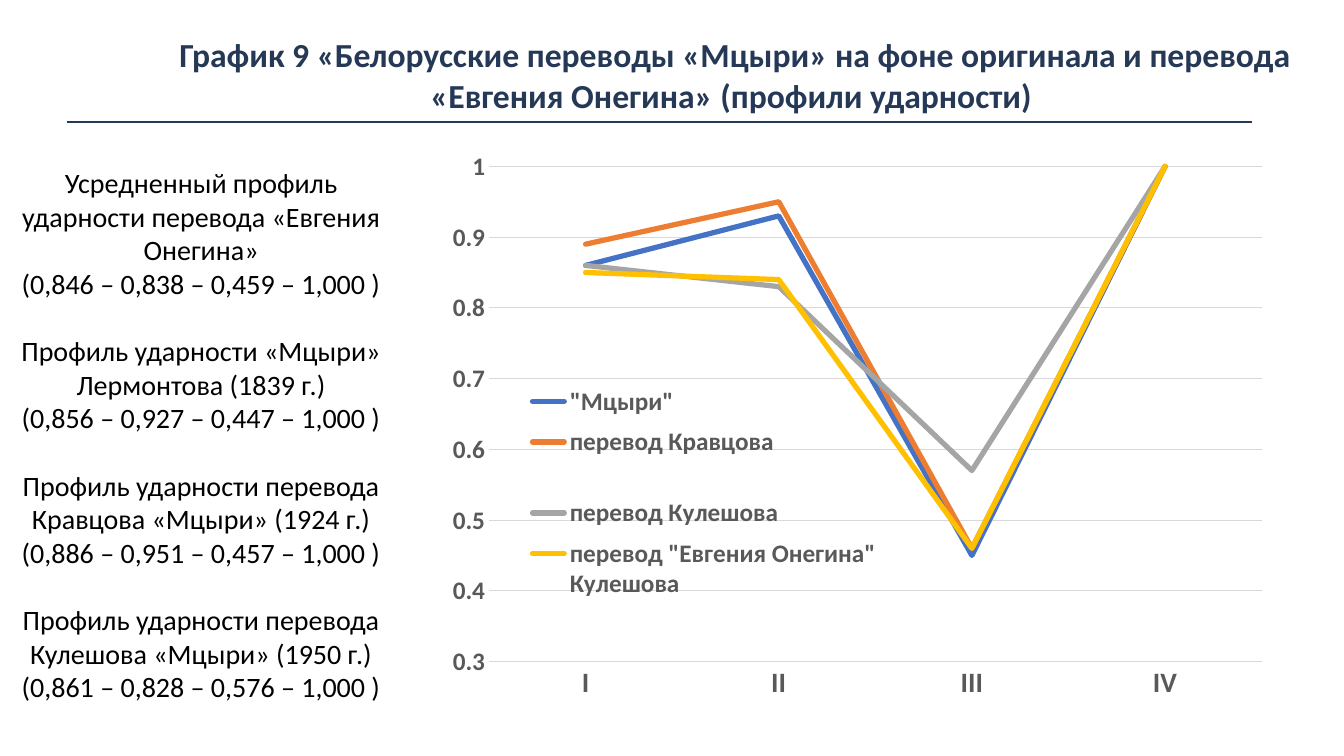
from lxml import etree
from pptx import Presentation
from pptx.chart.data import CategoryChartData
from pptx.dml.color import RGBColor
from pptx.enum.chart import XL_CHART_TYPE, XL_LEGEND_POSITION, XL_TICK_MARK
from pptx.enum.shapes import MSO_CONNECTOR
from pptx.enum.text import MSO_ANCHOR, MSO_AUTO_SIZE, PP_ALIGN
from pptx.oxml.ns import qn
from pptx.util import Inches, Pt

LINE_CHART = XL_CHART_TYPE.LINE
LEGEND_BOTTOM = XL_LEGEND_POSITION.BOTTOM
NO_TICKS = XL_TICK_MARK.NONE
STRAIGHT = MSO_CONNECTOR.STRAIGHT
TOP, MIDDLE = MSO_ANCHOR.TOP, MSO_ANCHOR.MIDDLE
CENTER = PP_ALIGN.CENTER
NO_AUTOFIT = MSO_AUTO_SIZE.NONE

FONT = "Calibri"
NAVY = RGBColor(0x25, 0x39, 0x57)
BLACK = RGBColor(0x00, 0x00, 0x00)
DARK_GRAY = RGBColor(0x59, 0x59, 0x59)
LIGHT_GRAY = RGBColor(0xD9, 0xD9, 0xD9)
BLUE = RGBColor(0x44, 0x72, 0xC4)
ORANGE = RGBColor(0xED, 0x7D, 0x31)
GRAY = RGBColor(0xA5, 0xA5, 0xA5)
YELLOW = RGBColor(0xFF, 0xC0, 0x00)

TITLE = ("График 9 «Белорусские переводы «Мцыри» на фоне оригинала и перевода "
         "«Евгения Онегина» (профили ударности) ")
PROFILES = [
    ("Усредненный профиль ударности перевода «Евгения Онегина»",
     "(0,846 – 0,838 – 0,459 – 1,000 )"),
    ("Профиль ударности «Мцыри» Лермонтова (1839 г.)",
     "(0,856 – 0,927 – 0,447 – 1,000 )"),
    ("Профиль ударности перевода Кравцова «Мцыри» (1924 г.)",
     "(0,886 – 0,951 – 0,457 – 1,000 )"),
    ("Профиль ударности перевода Кулешова «Мцыри» (1950 г.)",
     "(0,861 – 0,828 – 0,576 – 1,000 )"),
]
FEET = ["I", "II", "III", "IV"]
SERIES = [
    ('"Мцыри"', (0.86, 0.93, 0.45, 1), BLUE),
    ("перевод Кравцова\n", (0.89, 0.95, 0.46, 1), ORANGE),
    ("перевод Кулешова", (0.86, 0.83, 0.57, 1), GRAY),
    ('перевод "Евгения Онегина" Кулешова', (0.85, 0.84, 0.46, 1), YELLOW),
]
PLOT_AREA = (0.07, 0.04, 0.88, 0.85)
LEGEND_AREA = (0.1, 0.4, 0.43, 0.4)


def style_font(font, size, color, bold=False):
    font.name, font.size, font.bold = FONT, Pt(size), bold
    font.color.rgb = color


def fill_placeholder(shape, box, texts, inset, anchor, size, color, bold=False, gap=0):
    """Move a placeholder and write centred paragraphs without bullets."""
    shape.left, shape.top, shape.width, shape.height = map(Inches, box)
    frame = shape.text_frame
    frame.word_wrap, frame.auto_size = True, NO_AUTOFIT
    frame.vertical_anchor = anchor
    frame.margin_left = frame.margin_right = Inches(inset)
    frame.margin_top = frame.margin_bottom = Inches(inset)
    for index, text in enumerate(texts):
        paragraph = frame.add_paragraph() if index else frame.paragraphs[0]
        paragraph.text = text
        paragraph.alignment = CENTER
        paragraph.space_before = Pt(gap if index else 0)
        properties = paragraph._p.get_or_add_pPr()
        properties.set("marL", "0")
        properties.set("indent", "0")
        etree.SubElement(properties, qn("a:buNone"))
        for run in paragraph.runs:
            style_font(run.font, size, color, bold)


def place_in_chart(element, position, area, inner=False):
    """Give a chart part a manual layout in fractions of the chart."""
    for old_layout in element.findall(qn("c:layout")):
        element.remove(old_layout)
    layout = etree.Element(qn("c:layout"))
    manual = etree.SubElement(layout, qn("c:manualLayout"))
    settings = [("layoutTarget", "inner")] if inner else []
    settings += [("xMode", "edge"), ("yMode", "edge")]
    settings += zip("xywh", area)
    for name, value in settings:
        etree.SubElement(manual, qn(f"c:{name}")).set("val", str(value))
    element.insert(position, layout)


def add_profile_chart(slide):
    data = CategoryChartData()
    data.categories = FEET
    for name, values, _ in SERIES:
        data.add_series(name, values)
    chart = slide.shapes.add_chart(LINE_CHART, Inches(4.24), Inches(1.42),
                                   Inches(8.71), Inches(5.78), data).chart
    chart.has_title = False
    style_font(chart.font, 10, BLACK)
    plot = chart.plots[0]
    plot.vary_by_categories = False
    for series, (_, _, color) in zip(plot.series, SERIES):
        series.smooth = False
        series.format.line.color.rgb = color
        series.format.line.width = Pt(3.75)
        series._element.find(qn("c:spPr")).find(qn("a:ln")).set("cap", "rnd")

    feet_axis, stress_axis = chart.category_axis, chart.value_axis
    for axis, size in ((feet_axis, 20), (stress_axis, 18)):
        axis.major_tick_mark = axis.minor_tick_mark = NO_TICKS
        style_font(axis.tick_labels.font, size, DARK_GRAY, True)
    stress_axis.minimum_scale, stress_axis.maximum_scale = 0.3, 1
    stress_axis.major_unit = 0.1
    stress_axis.format.line.fill.background()
    stress_axis.has_major_gridlines = True
    for line in (feet_axis.format.line, stress_axis.major_gridlines.format.line):
        line.color.rgb = LIGHT_GRAY
        line.width = Pt(0.75)

    chart.has_legend = True
    legend = chart.legend
    legend.position = LEGEND_BOTTOM
    legend.include_in_layout = True
    style_font(legend.font, 18, DARK_GRAY, True)
    place_in_chart(legend._element, 1, LEGEND_AREA)
    plot_area = chart._chartSpace.chart.plotArea
    place_in_chart(plot_area, 0, PLOT_AREA, inner=True)


def main():
    presentation = Presentation()
    presentation.slide_width, presentation.slide_height = Inches(13.33), Inches(7.5)
    slide = presentation.slides.add_slide(presentation.slide_layouts[1])
    title, body = slide.placeholders
    fill_placeholder(title, (1.41, 0.3, 11.76, 0.72), [TITLE], 0.04, TOP, 24, NAVY, bold=True)
    fill_placeholder(body, (0, 1.54, 3.99, 5.54), ["\n".join(lines) for lines in PROFILES],
                     0.08, MIDDLE, 20, BLACK, gap=24)
    add_profile_chart(slide)
    rule = slide.shapes.add_connector(STRAIGHT, Inches(0.66), Inches(1.21),
                                      Inches(12.42), Inches(1.21))
    rule.line.color.rgb = NAVY
    rule.line.width = Pt(1)
    etree.SubElement(rule._element.spPr, qn("a:effectLst"))
    presentation.save("out.pptx")


if __name__ == "__main__":
    main()
